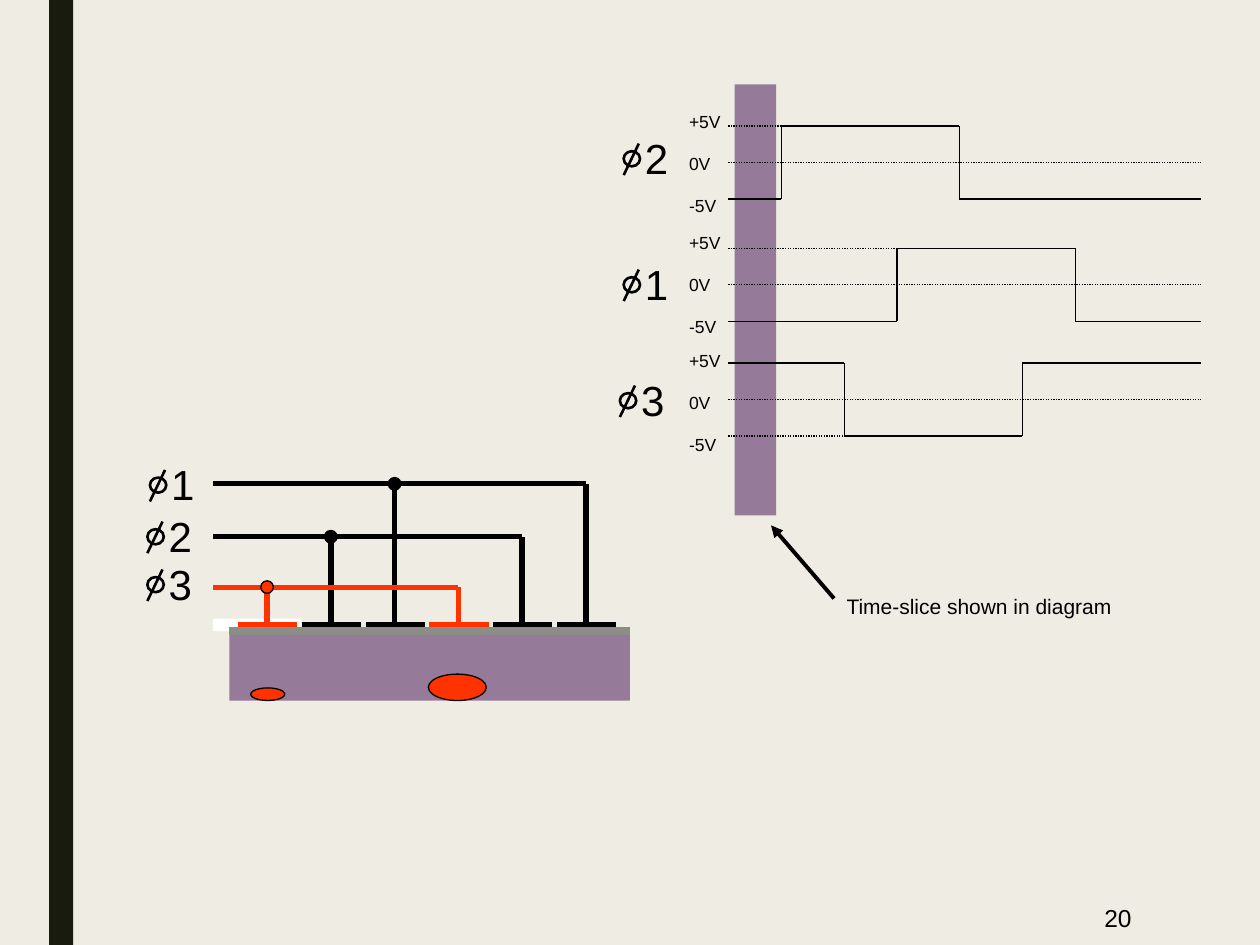
from pptx import Presentation
from pptx.dml.color import RGBColor
from pptx.enum.dml import MSO_LINE
from pptx.enum.shapes import MSO_CONNECTOR, MSO_SHAPE
from pptx.enum.text import MSO_ANCHOR, MSO_AUTO_SIZE, PP_ALIGN
from pptx.oxml.ns import qn
from pptx.util import Inches, Pt
from lxml import etree

RECT, OVAL = MSO_SHAPE.RECTANGLE, MSO_SHAPE.OVAL
WIRE, DOT = MSO_CONNECTOR.STRAIGHT, MSO_LINE.ROUND_DOT
LEFT, RIGHT = PP_ALIGN.LEFT, PP_ALIGN.RIGHT
TOP, MID = MSO_ANCHOR.TOP, MSO_ANCHOR.MIDDLE
GROW, FIXED = MSO_AUTO_SIZE.SHAPE_TO_FIT_TEXT, MSO_AUTO_SIZE.NONE
CREAM = RGBColor(0xEF, 0xED, 0xE3)
OLIVE = RGBColor(0x19, 0x1B, 0x0E)
MAUVE = RGBColor(0x95, 0x7A, 0x99)
RED = RGBColor(0xFF, 0x33, 0x00)
GREY = RGBColor(0x8C, 0x8D, 0x86)
WHITE = RGBColor(0xFF, 0xFF, 0xFF)
BLACK = RGBColor(0, 0, 0)

deck = Presentation()
deck.slide_width, deck.slide_height = Inches(10), Inches(7.5)
CELL = deck.slide_width / 10
slide = deck.slides.add_slide(deck.slide_layouts[6])
slide.background.fill.solid()
slide.background.fill.fore_color.rgb = CREAM


def block(kind, spot, fill=None, edge=0):
    item = slide.shapes.add_shape(kind, *[int(v * CELL) for v in spot])
    item.shadow.inherit = False
    if fill is None:
        item.fill.background()
    else:
        item.fill.solid()
        item.fill.fore_color.rgb = fill
    if edge:
        item.line.color.rgb = BLACK
        item.line.width = Pt(edge)
    else:
        item.line.fill.background()


def wire(x1, y1, x2, y2, width=0.75, color=BLACK, dash=None):
    item = slide.shapes.add_connector(WIRE, *[int(v * CELL) for v in (x1, y1, x2, y2)])
    item.line.color.rgb = color
    for key, value in {"width": Pt(width), "dash_style": dash}.items():
        setattr(item.line, key, value)
    etree.SubElement(item._element.spPr, qn("a:effectLst"))
    return item


block(RECT, (0.39, 0, 0.19, 7.5), OLIVE)
block(RECT, (5.83, 0.67, 0.33, 3.42), MAUVE)
block(RECT, (1.82, 5.04, 3.18, 0.52), MAUVE)
block(RECT, (1.69, 4.91, 0.7, 0.1), WHITE)

GATE, FIRST, STEP = 4.97, 2.12, 0.506
buses = [(4.66, RED), (4.26, BLACK), (3.84, BLACK)]
for col in range(6):
    mid = FIRST + col * STEP
    row, color = buses[col % 3]
    wire(mid - 0.23, GATE, mid + 0.24, GATE, 4.5, color)
    wire(mid, GATE, mid, row, 3, color)
wire(1.82, 5.01, 5, 5.01, 4.5, GREY)
for col, (row, color) in reversed(list(enumerate(buses))):
    mid = FIRST + col * STEP
    wire(mid + 3 * STEP, row, 1.69, row, 3, color)
    block(OVAL, (mid - 0.05, row - 0.05, 0.1, 0.1), color, 0.75)
block(OVAL, (1.99, 5.46, 0.27, 0.1), RED, 0.75)
block(OVAL, (3.4, 5.35, 0.46, 0.21), RED, 0.75)

START, END, SWING, PULSE = 5.78, 9.53, 0.58, 1.415
waves = [(1, 6.2, False), (1.97, 7.12, False), (2.88, 6.7, True)]
for high, rise, flip in waves:
    low, fall = high + SWING, rise + PULSE
    rest, peak = (high, low) if flip else (low, high)
    zero = high + SWING / 2
    wire(START, zero, END, zero, dash=DOT)
    wire(START, peak, rise, peak, dash=DOT)
    wire(START, rest, rise, rest)
    wire(rise, peak, fall, peak)
    wire(fall, rest, END, rest)
    for x in (rise, fall):
        wire(x, high, x, low)

arrow = wire(6.62, 4.75, 6.12, 4.17, 2.25)
etree.SubElement(arrow.line._get_or_add_ln(), qn("a:tailEnd"), type="triangle")

notes = [((7.77, 7.06, 1.31, 0.44), ["20"], 14, RIGHT, MID, FIXED, True),
         ((6.62, 4.66, 2.31, 0.3), ["Time-slice shown in diagram"], 12, LEFT, TOP, GROW, True)]
for y in (0.83, 1.79, 2.73):
    notes.append(((5.37, y, 0.45, 0.93), ["+5V", "0V", "-5V"], 10, LEFT, TOP, GROW, False))

phases = [("1", 1.19, 3.79), ("2", 1.17, 4.2), ("3", 1.17, 4.58),
          ("1", 4.95, 2.2), ("2", 4.95, 1.2), ("3", 4.92, 3.12)]
for name, x, y in phases:
    block(OVAL, (x, y, 0.13, 0.12), None, 1.5)
    wire(x + 0.12, y - 0.06, x, y + 0.19, 1.5)
    notes.append(((x + 0.07, y - 0.2, 0.39, 0.5), [name], 24, LEFT, TOP, GROW, False))

for spot, lines, size, align, anchor, fit, wrap in notes:
    frame = slide.shapes.add_textbox(*[int(v * CELL) for v in spot]).text_frame
    frame.text = "\n".join(lines)
    for key, value in {"word_wrap": wrap, "auto_size": fit, "vertical_anchor": anchor}.items():
        setattr(frame, key, value)
    for rank, para in enumerate(frame.paragraphs):
        para.alignment = align
        para.space_before = Pt(12 if rank else 0)
        para.font.color.rgb = BLACK
        for key, value in {"name": "Arial", "size": Pt(size)}.items():
            setattr(para.font, key, value)

deck.save("out.pptx")
